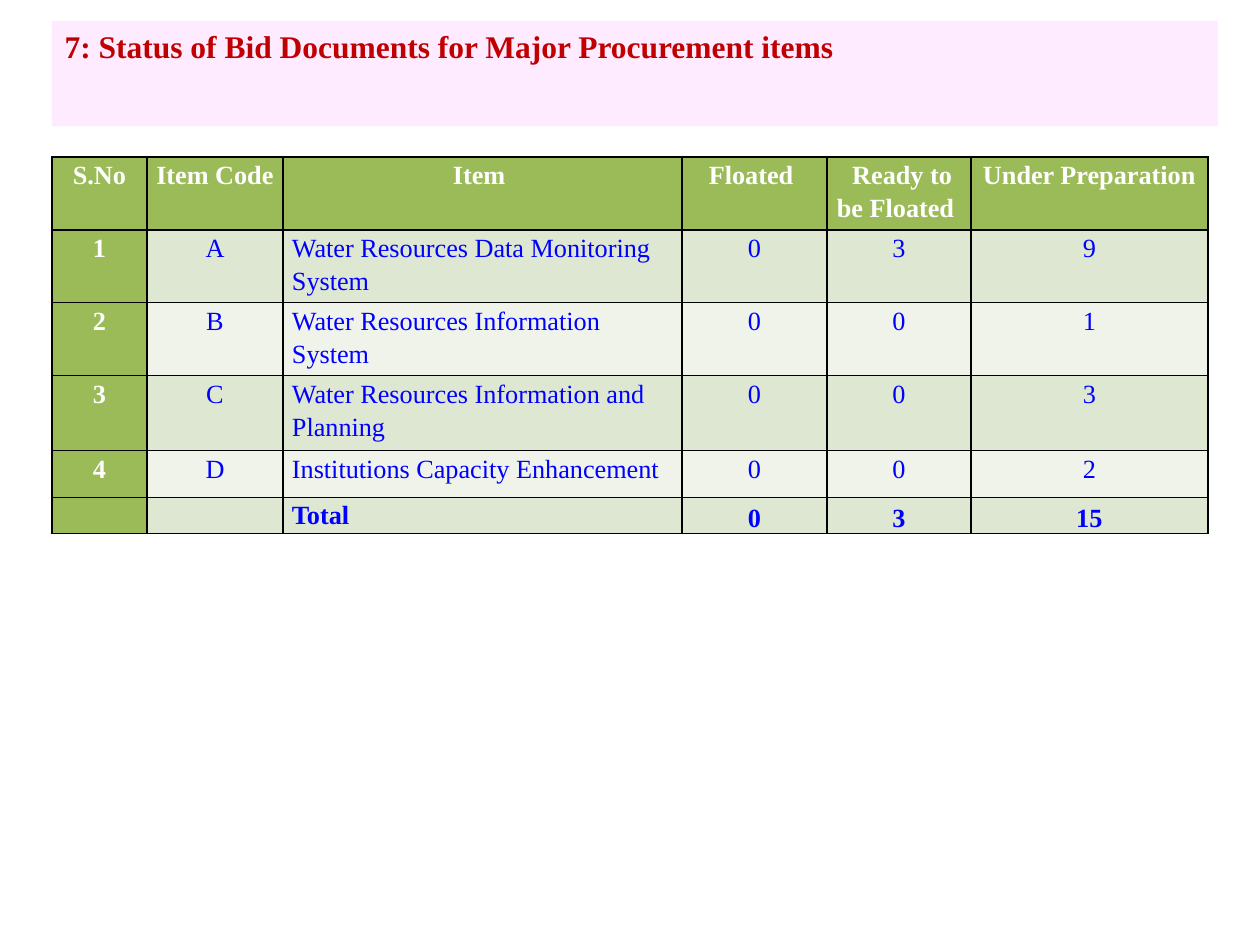
import pptx
import pptx.util
import pptx.dml.color
import pptx.enum.text
import pptx.oxml
import pptx.oxml.ns

RGB = pptx.dml.color.RGBColor
ALIGN = pptx.enum.text.PP_ALIGN
ANCHOR = pptx.enum.text.MSO_ANCHOR
PINK = RGB(0xFF, 0xEB, 0xFF)
RED = RGB(0xC0, 0x00, 0x00)
GREEN = RGB(0x9B, 0xBB, 0x59)
PALE = RGB(0xDE, 0xE7, 0xD1)
LIGHT = RGB(0xEF, 0xF3, 0xEA)
BLUE = RGB(0x00, 0x00, 0xFF)
WHITE = RGB(0xFF, 0xFF, 0xFF)
BLACK = RGB(0x00, 0x00, 0x00)
FONT = "Times New Roman"
SCALE = 914400 // 126

COLS = [95, 136, 399, 145, 144, 237]
ROWS = [73, 72, 73, 75, 47, 36]
DATA = [
    ["S.No", "Item Code", "Item ", "Floated ", " Ready to be Floated ", "Under Preparation "],
    ["1", "A", "Water Resources Data Monitoring System", "0", "3", "9"],
    ["2", "B", "Water Resources Information System", "0", "0", "1"],
    ["3", "C", "Water Resources Information and Planning", "0", "0", "3"],
    ["4", "D", "Institutions Capacity Enhancement", "0", "0", "2"],
    ["", "", "Total", "0", "3", "15"],
]


def px(n):
    return pptx.util.Emu(n * SCALE)


def style(para, size, color, bold):
    for run in para.runs:
        font = run.font
        font.name = FONT
        font.size = pptx.util.Pt(size)
        font.bold = bold
        font.color.rgb = color


def add_title(slide, text):
    title = slide.shapes.title
    title.left, title.top, title.width, title.height = px(52), px(21), px(1166), px(51)
    title.fill.solid()
    title.fill.fore_color.rgb = PINK
    frame = title.text_frame
    frame.text = text
    frame.word_wrap = True
    frame.auto_size = pptx.enum.text.MSO_AUTO_SIZE.SHAPE_TO_FIT_TEXT
    frame.vertical_anchor = ANCHOR.TOP
    frame.paragraphs[0].alignment = ALIGN.LEFT
    style(frame.paragraphs[0], 18, RED, True)


def add_edges(cell):
    props = cell._tc.get_or_add_tcPr()
    for i, side in enumerate(("lnL", "lnR", "lnT", "lnB")):
        props.insert(i, pptx.oxml.parse_xml(
            f'<a:{side} {pptx.oxml.ns.nsdecls("a")} w="12700"><a:solidFill>'
            f'<a:srgbClr val="{BLACK}"/></a:solidFill></a:{side}>'))


def fill_cell(cell, text, row, col):
    head = row == 0 or col == 0
    cell.fill.solid()
    cell.fill.fore_color.rgb = GREEN if head else PALE if row % 2 else LIGHT
    cell.margin_left = cell.margin_right = px(9)
    cell.margin_top = cell.margin_bottom = 0
    last = row == len(DATA) - 1
    cell.vertical_anchor = ANCHOR.BOTTOM if last and col > 2 else ANCHOR.TOP
    cell.text_frame.text = text
    para = cell.text_frame.paragraphs[0]
    para.line_spacing = 1.15
    para.alignment = ALIGN.LEFT if col == 2 and row else ALIGN.CENTER
    style(para, 15, WHITE if head else BLUE, head or last)
    if not text:
        para._p.append(pptx.oxml.parse_xml(
            f'<a:endParaRPr {pptx.oxml.ns.nsdecls("a")} sz="1500"/>'))
    add_edges(cell)


def add_grid(slide):
    frame = slide.shapes.add_table(
        len(ROWS), len(COLS), px(52), px(157), px(sum(COLS)), px(sum(ROWS)))
    table = frame.table
    for col, width in zip(table.columns, COLS):
        col.width = px(width)
    for row, height in zip(table.rows, ROWS):
        row.height = px(height)
    for r, line in enumerate(DATA):
        for c, text in enumerate(line):
            fill_cell(table.cell(r, c), text, r, c)


def main():
    deck = pptx.Presentation()
    deck.slide_width = pptx.util.Inches(10)
    deck.slide_height = pptx.util.Inches(7.5)
    slide = deck.slides.add_slide(deck.slide_layouts[5])
    add_title(slide, "7: Status of Bid Documents for Major Procurement items")
    add_grid(slide)
    deck.save("out.pptx")


if __name__ == "__main__":
    main()
